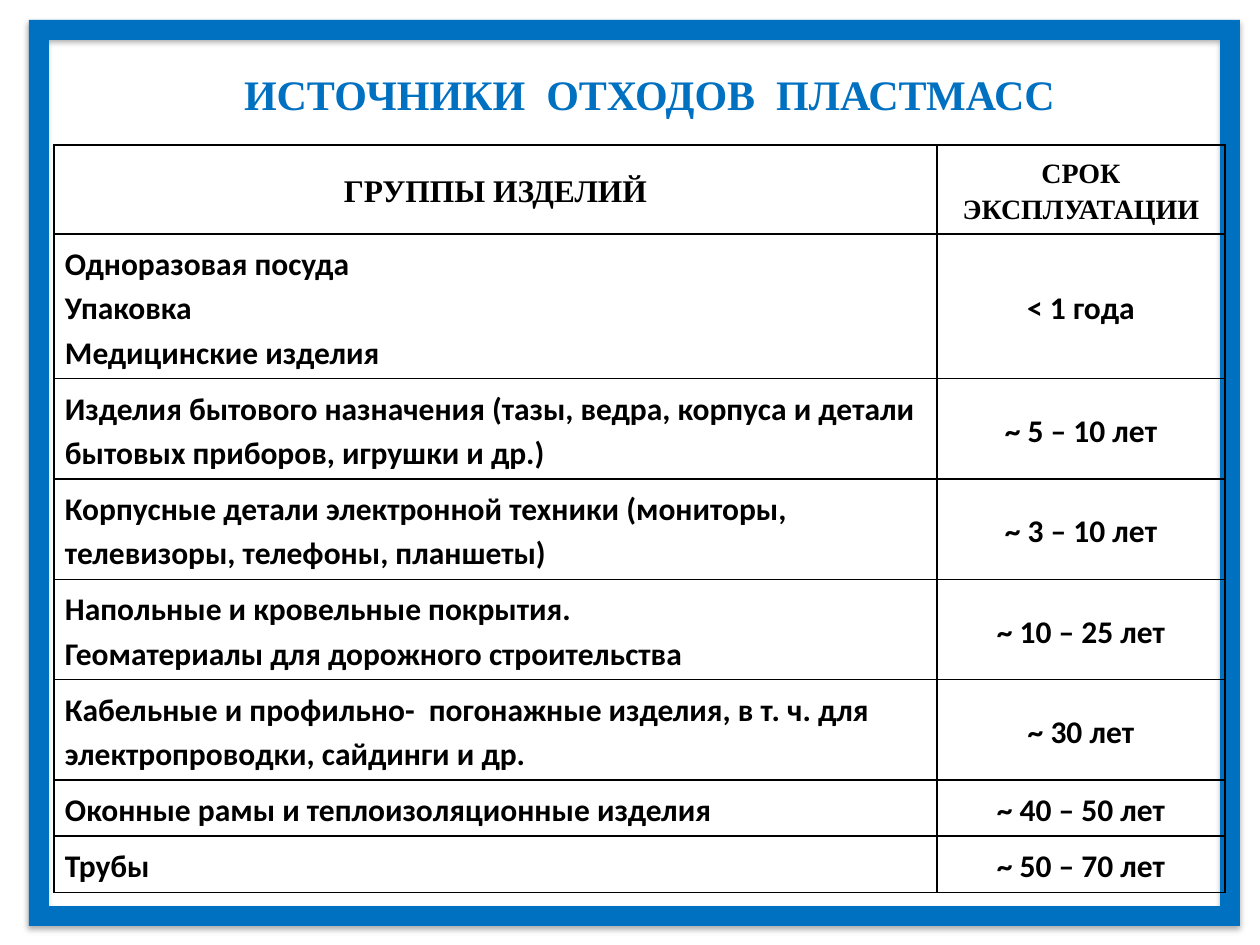
from lxml import etree
from pptx import Presentation
from pptx import util as u
from pptx.dml.color import RGBColor
from pptx.enum import shapes, text
from pptx.oxml import ns

SCALE = 914400 / 126
BLUE = RGBColor(0x00, 0x70, 0xC0)
BLACK = RGBColor(0, 0, 0)
SERIF = "Times New Roman"
SANS = "Calibri"
CENTER = text.PP_ALIGN.CENTER
LEFT = text.PP_ALIGN.LEFT

COLUMNS = [883, 288]
ROW_HEIGHTS = [89, 144, 98, 98, 100, 100, 53, 53]
HEADINGS = [("ГРУППЫ ИЗДЕЛИЙ", 18, 3), ("СРОК ЭКСПЛУАТАЦИИ", 16, 0)]
GROUPS = [
    ("Одноразовая посуда\nУпаковка\nМедицинские изделия", "< 1 года"),
    ("Изделия бытового назначения (тазы, ведра, корпуса и детали бытовых приборов, игрушки и др.)",
     "~ 5 – 10 лет"),
    ("Корпусные детали электронной техники (мониторы, телевизоры, телефоны, планшеты)",
     "~ 3 – 10 лет"),
    ("Напольные и кровельные покрытия.\nГеоматериалы для дорожного строительства",
     "~ 10 – 25 лет"),
    ("Кабельные и профильно-  погонажные изделия, в т. ч. для электропроводки, сайдинги и др.",
     "~ 30 лет"),
    ("Оконные рамы и теплоизоляционные изделия", "~ 40 – 50 лет"),
    ("Трубы", "~ 50 – 70 лет"),
]


def px(n):
    return u.Emu(round(n * SCALE))


def write(tf, words, size, font, color=BLACK, align=LEFT, space=0):
    tf.text = words
    for p in tf.paragraphs:
        p.alignment = align
        p.line_spacing = 1.15
        p.space_before = p.space_after = u.Pt(space)
        for r in p.runs:
            r.font.size = u.Pt(size)
            r.font.name = font
            r.font.bold = True
            r.font.color.rgb = color


def add_shadow(s):
    s.shadow.inherit = False
    effects = s._element.spPr.find(ns.qn("a:effectLst"))
    shadow = etree.SubElement(effects, ns.qn("a:outerShdw"), blurRad="44450",
                              dist="27940", dir="5400000", rotWithShape="0")
    color = etree.SubElement(shadow, ns.qn("a:srgbClr"), val=str(BLACK))
    etree.SubElement(color, ns.qn("a:alpha"), val="32000")


def add_frame(slide):
    s = slide.shapes.add_shape(shapes.MSO_SHAPE.FRAME, px(29), px(20), px(1211), px(906))
    s.adjustments[0] = 0.022
    s.fill.solid()
    s.fill.fore_color.rgb = BLUE
    s.line.fill.background()
    add_shadow(s)


def add_title(slide):
    s = slide.shapes.add_textbox(px(223), px(55), px(853), px(68))
    tf = s.text_frame
    tf.word_wrap = True
    tf.auto_size = text.MSO_AUTO_SIZE.SHAPE_TO_FIT_TEXT
    write(tf, "ИСТОЧНИКИ  ОТХОДОВ  ПЛАСТМАСС", 24, SERIF, BLUE, CENTER, 3)


def style_cell(cell):
    cell.margin_left = cell.margin_right = px(11)
    cell.margin_top = cell.margin_bottom = px(6)
    tc_pr = cell._tc.get_or_add_tcPr()
    for side in ("lnL", "lnR", "lnT", "lnB"):
        line = etree.SubElement(tc_pr, ns.qn("a:" + side), w="12700")
        fill = etree.SubElement(line, ns.qn("a:solidFill"))
        etree.SubElement(fill, ns.qn("a:srgbClr"), val=str(BLACK))
    cell.fill.background()


def add_lifetime_table(slide):
    s = slide.shapes.add_table(len(ROW_HEIGHTS), len(COLUMNS), px(54), px(145),
                               px(sum(COLUMNS)), px(sum(ROW_HEIGHTS)))
    table = s.table
    table.first_row = table.horz_banding = False
    for column, width in zip(table.columns, COLUMNS):
        column.width = px(width)
    for row, height in zip(table.rows, ROW_HEIGHTS):
        row.height = px(height)
    for cell in table.iter_cells():
        style_cell(cell)
        cell.vertical_anchor = text.MSO_ANCHOR.MIDDLE

    for col, (heading, size, space) in enumerate(HEADINGS):
        write(table.cell(0, col).text_frame, heading, size, SERIF, align=CENTER, space=space)
    for row, (products, lifetime) in enumerate(GROUPS, 1):
        table.cell(row, 0).vertical_anchor = text.MSO_ANCHOR.TOP
        write(table.cell(row, 0).text_frame, products, 18, SANS)
        write(table.cell(row, 1).text_frame, lifetime, 18, SANS, align=CENTER)


def main():
    prs = Presentation()
    prs.slide_width, prs.slide_height = px(1260), px(945)
    slide = prs.slides.add_slide(prs.slide_layouts[6])
    add_frame(slide)
    add_lifetime_table(slide)
    add_title(slide)
    prs.save("out.pptx")


if __name__ == "__main__":
    main()
